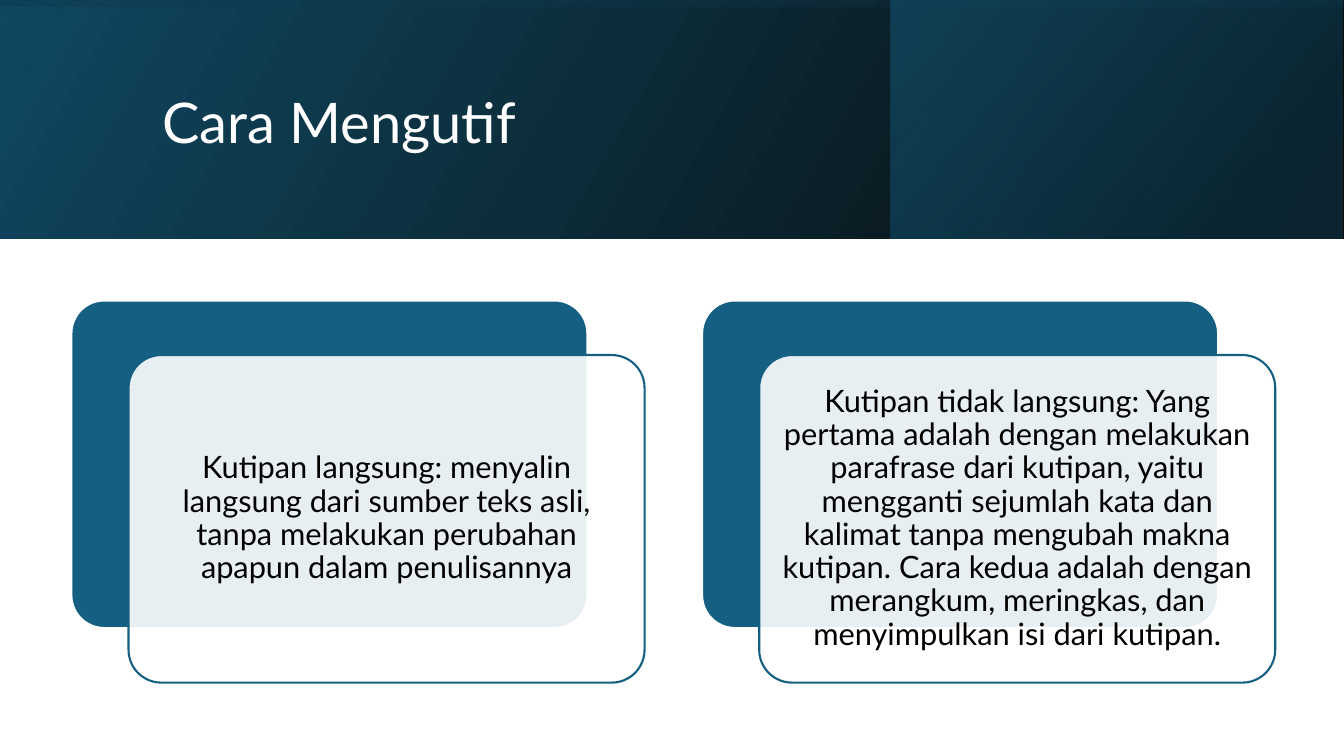
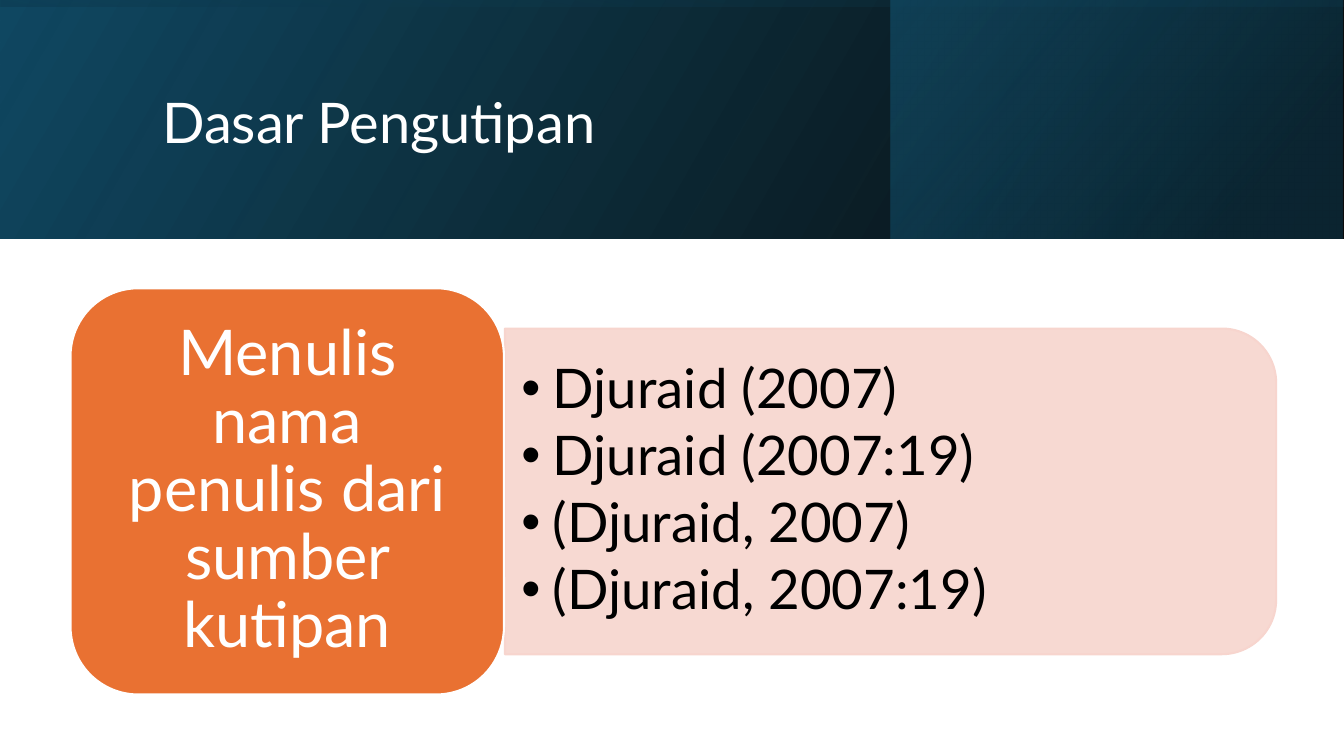
from lxml.etree import SubElement
from pptx import Presentation
from pptx.dml.color import RGBColor
from pptx.enum.shapes import MSO_SHAPE as SHAPE
from pptx.enum.text import MSO_ANCHOR as ANCHOR, MSO_AUTO_SIZE as AUTO, PP_ALIGN as ALIGN
from pptx.oxml.ns import qn
from pptx.util import Pt

# Shared style, lengths in points
W, H = 960, 540
BAND_H = 170.6
FONT = "Lato"
WHITE, BLACK, TEAL, NAVY = "FFFFFF", "000000", "156082", "104862"
DEEP, ORANGE, PINK = "0B3041", "E97132", "F7D5CE"
TITLE_ONLY, TITLE_BODY = 5, 1


def rgb(code):
    return RGBColor.from_string(code)


def set_alpha(color, percent):
    SubElement(color, qn("a:alpha")).set("val", str(percent * 1000))


class Deck:
    def __init__(self):
        self.prs = Presentation()
        self.prs.slide_width, self.prs.slide_height = Pt(W), Pt(H)
        self.slide = None

    def new_slide(self, title, layout):
        self.slide = self.prs.slides.add_slide(self.prs.slide_layouts[layout])
        self.bands()
        sp = self.slide.shapes.title
        self.slide.shapes._spTree.append(sp._element)  # bring above the bands
        self.place(sp, 108.7, 27.4, 765.4, 123.8)
        self.text(sp, [title], 40, WHITE, ALIGN.LEFT)

    def bands(self):
        self.gradient(0, 0, W, BAND_H, 330, [(0, BLACK, 96), (100, NAVY, 100)])
        self.gradient(636.5, 0, 322.6, BAND_H, 320, [(19, DEEP, 68), (100, TEAL, 48)])
        # Upright strip turned to lie over the whole band
        shift = (W - BAND_H) / 2
        sp = self.gradient(shift, -shift, BAND_H, W, 350, [(23, NAVY, 16), (99, BLACK, 45)])
        sp.rotation = 270

    def gradient(self, x, y, w, h, angle, stops):
        sp = self.shape(SHAPE.RECTANGLE, x, y, w, h)
        sp_pr = sp._element.spPr
        sp_pr.find(qn("a:xfrm")).set("flipH", "1")
        sp.fill.gradient()
        grad = sp_pr.find(qn("a:gradFill"))
        gs_list = grad.find(qn("a:gsLst"))
        for gs in list(gs_list):
            gs_list.remove(gs)
        for pos, color, alpha in stops:
            gs = SubElement(gs_list, qn("a:gs"), pos=str(pos * 1000))
            set_alpha(SubElement(gs, qn("a:srgbClr"), val=color), alpha)
        lin = grad.find(qn("a:lin"))
        lin.set("ang", str(angle * 60000))
        lin.set("scaled", "0")
        return sp

    def shape(self, kind, x, y, w, h, fill=None, line=None, alpha=None, adj=None):
        sp = self.slide.shapes.add_shape(kind, Pt(x), Pt(y), Pt(w), Pt(h))
        sp.shadow.inherit = False
        if adj is not None:
            sp.adjustments[0] = adj
        if fill:
            sp.fill.solid()
            sp.fill.fore_color.rgb = rgb(fill)
        if alpha is not None:
            set_alpha(sp._element.spPr.find(qn("a:solidFill"))[0], alpha)
        if line:
            sp.line.color.rgb = rgb(line)
            sp.line.width = Pt(1.5)
        else:
            sp.line.fill.background()
        return sp

    def place(self, sp, x, y, w, h):
        sp.left, sp.top, sp.width, sp.height = Pt(x), Pt(y), Pt(w), Pt(h)

    def text(self, sp, lines, size, color, align, inset=(7.2, 3.6), after=0, bullet_indent=0):
        tf = sp.text_frame
        tf.word_wrap, tf.auto_size = True, AUTO.NONE
        tf.vertical_anchor = ANCHOR.MIDDLE
        tf.margin_left = tf.margin_right = Pt(inset[0])
        tf.margin_top = tf.margin_bottom = Pt(inset[1])
        for i, line in enumerate(lines):
            p = tf.add_paragraph() if i else tf.paragraphs[0]
            p.text, p.alignment, p.line_spacing = line, align, 0.9
            p.space_before, p.space_after = Pt(0), Pt(after)
            if bullet_indent:
                p_pr = p._p.get_or_add_pPr()
                p_pr.set("marL", str(Pt(bullet_indent)))
                p_pr.set("indent", str(-Pt(bullet_indent)))
                SubElement(p_pr, qn("a:buChar"), char="•")
            p.font.name, p.font.size = FONT, Pt(size)
            p.font.color.rgb = rgb(color)

    def card(self, x, y, text):
        w, h = 368.6, 234
        self.shape(SHAPE.ROUNDED_RECTANGLE, x, y, w, h, TEAL, WHITE, adj=0.1)
        sp = self.shape(SHAPE.ROUNDED_RECTANGLE, x + 40.8, y + 39, w, h, WHITE, TEAL, 90, 0.1)
        self.text(sp, [text], 22, BLACK, ALIGN.CENTER, (6.6, 6.6))

    def bullets(self, x, y, w, h, lines):
        sp = self.slide.placeholders[1]
        self.slide.shapes._spTree.append(sp._element)  # bring above the panel
        self.place(sp, x, y, w, h)
        self.text(sp, lines, 39, BLACK, ALIGN.LEFT, (11.7, 5.85), 5.85, 22.5)


def main():
    deck = Deck()

    # Ways of quoting: two layered cards
    deck.new_slide("Cara Mengutif", TITLE_ONLY)
    cards = [
        "Kutipan langsung: menyalin langsung dari sumber teks asli, tanpa melakukan "
        "perubahan apapun dalam penulisannya",
        "Kutipan tidak langsung: Yang pertama adalah dengan melakukan parafrase dari "
        "kutipan, yaitu mengganti sejumlah kata dan kalimat tanpa mengubah makna kutipan. "
        "Cara kedua adalah dengan merangkum, meringkas, dan menyimpulkan isi dari kutipan.",
    ]
    for i, text in enumerate(cards):
        deck.card(51 + i * 450.5, 214.6, text)

    # Basis of citation: label and list of forms
    deck.new_slide("Dasar Pengutipan", TITLE_BODY)
    panel = deck.shape(SHAPE.ROUND_2_SAME_RECTANGLE, 519.8, 75.6, 232.6, 550.8, PINK, PINK, 90)
    panel.rotation = 90
    deck.bullets(360.7, 246.2, 539.3, 209.5, [
        "Djuraid (2007)", "Djuraid (2007:19)", "(Djuraid, 2007)", "(Djuraid, 2007:19)"])
    label = deck.shape(SHAPE.ROUNDED_RECTANGLE, 50.4, 205.9, 309.6, 290.2, ORANGE, WHITE)
    deck.text(label, ["Menulis nama penulis dari sumber kutipan"], 45, WHITE,
              ALIGN.CENTER, (13.5, 6.75))

    deck.prs.save("out.pptx")


if __name__ == "__main__":
    main()
